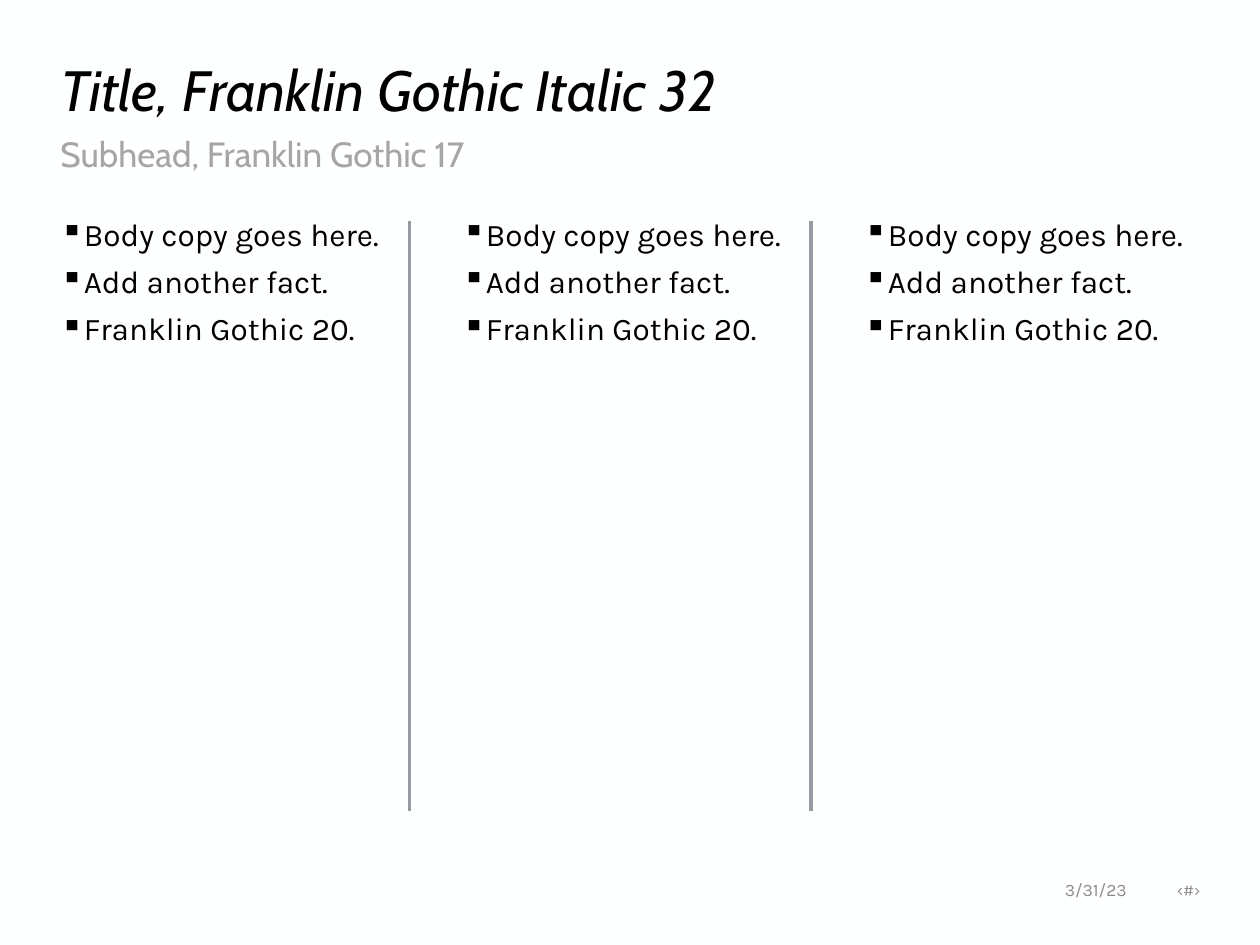
from dataclasses import dataclass

from lxml.etree import SubElement
from pptx import Presentation
from pptx.dml.color import RGBColor as Color
from pptx.enum.shapes import MSO_CONNECTOR as Connector
from pptx.enum.text import MSO_ANCHOR as Anchor
from pptx.oxml.ns import qn
from pptx.util import Pt


@dataclass(frozen=True)
class TextStyle:
    font: str
    size: float
    color: str
    italic: bool = False


@dataclass(frozen=True)
class Theme:
    background: str = "FEFFFF"
    divider: str = "979AA2"
    divider_width: float = 2.25
    title: TextStyle = TextStyle("Cabin", 32.4, "000000", True)
    subhead: TextStyle = TextStyle("Cabin", 20, "A6A6A6")
    body: TextStyle = TextStyle("Karla", 18, "000000")
    footer: TextStyle = TextStyle("Karla", 10, "8C8C8C")


THEME = Theme()
LEFT = 27.36
COLUMN_STEP = 229.7
COLUMN_COUNT = 3
FACTS = ["Body copy goes here.", "Add another fact.", "Franklin Gothic 20."]


def add_text(slide, box, lines, style, anchor=Anchor.TOP, line_spacing=0.9):
    shape = slide.shapes.add_textbox(*map(Pt, box))
    frame = shape.text_frame
    frame.word_wrap = True
    frame.vertical_anchor = anchor
    frame.text = "\n".join(lines)
    for index, paragraph in enumerate(frame.paragraphs):
        paragraph.line_spacing = line_spacing
        paragraph.space_before = Pt(7.5 if index else 0)
        for run in paragraph.runs:
            run.font.name = style.font
            run.font.size = Pt(style.size)
            run.font.italic = style.italic
            run.font.color.rgb = Color.from_string(style.color)
    return frame


def add_bullets(slide, box, lines):
    frame = add_text(slide, box, lines, THEME.body)
    for paragraph in frame.paragraphs:
        properties = paragraph._p.get_or_add_pPr()
        properties.set("marL", str(Pt(13.5)))
        properties.set("indent", str(-Pt(13.5)))
        SubElement(properties, qn("a:buChar"), char="▪")


def add_divider(slide, x, top, bottom):
    line = slide.shapes.add_connector(
        Connector.STRAIGHT, Pt(x), Pt(top), Pt(x), Pt(bottom)
    )
    line.line.color.rgb = Color.from_string(THEME.divider)
    line.line.width = Pt(THEME.divider_width)
    SubElement(line._element.spPr, qn("a:effectLst"))


def add_footer(slide, date, number):
    box = (587.5, 495.4, 105.8, 25.2)
    frame = add_text(slide, box, [f"{date}\t{number}"], THEME.footer, Anchor.MIDDLE, 1.0)
    frame.margin_left = Pt(21)
    properties = frame.paragraphs[0]._p.get_or_add_pPr()
    tabs = SubElement(properties, qn("a:tabLst"))
    SubElement(tabs, qn("a:tab"), pos=str(Pt(64)), algn="l")


def main():
    presentation = Presentation()
    presentation.slide_width = Pt(720)
    presentation.slide_height = Pt(540)
    slide = presentation.slides.add_slide(presentation.slide_layouts[6])
    fill = slide.background.fill
    fill.solid()
    fill.fore_color.rgb = Color.from_string(THEME.background)

    add_text(slide, (LEFT, 30.2, 665.3, 46.1), ["Title, Franklin Gothic Italic 32"],
             THEME.title, Anchor.MIDDLE)
    add_text(slide, (LEFT, 74.9, 666, 28.8), ["Subhead, Franklin Gothic 17"], THEME.subhead)
    for column in range(COLUMN_COUNT):
        offset = column * COLUMN_STEP
        add_bullets(slide, (LEFT + offset, 121.7, 207.4, 345.6), FACTS)
        if column < COLUMN_COUNT - 1:
            add_divider(slide, 234 + offset, 126, 463.7)
    add_footer(slide, "3/31/23", "‹#›")
    presentation.save("out.pptx")


if __name__ == "__main__":
    main()
